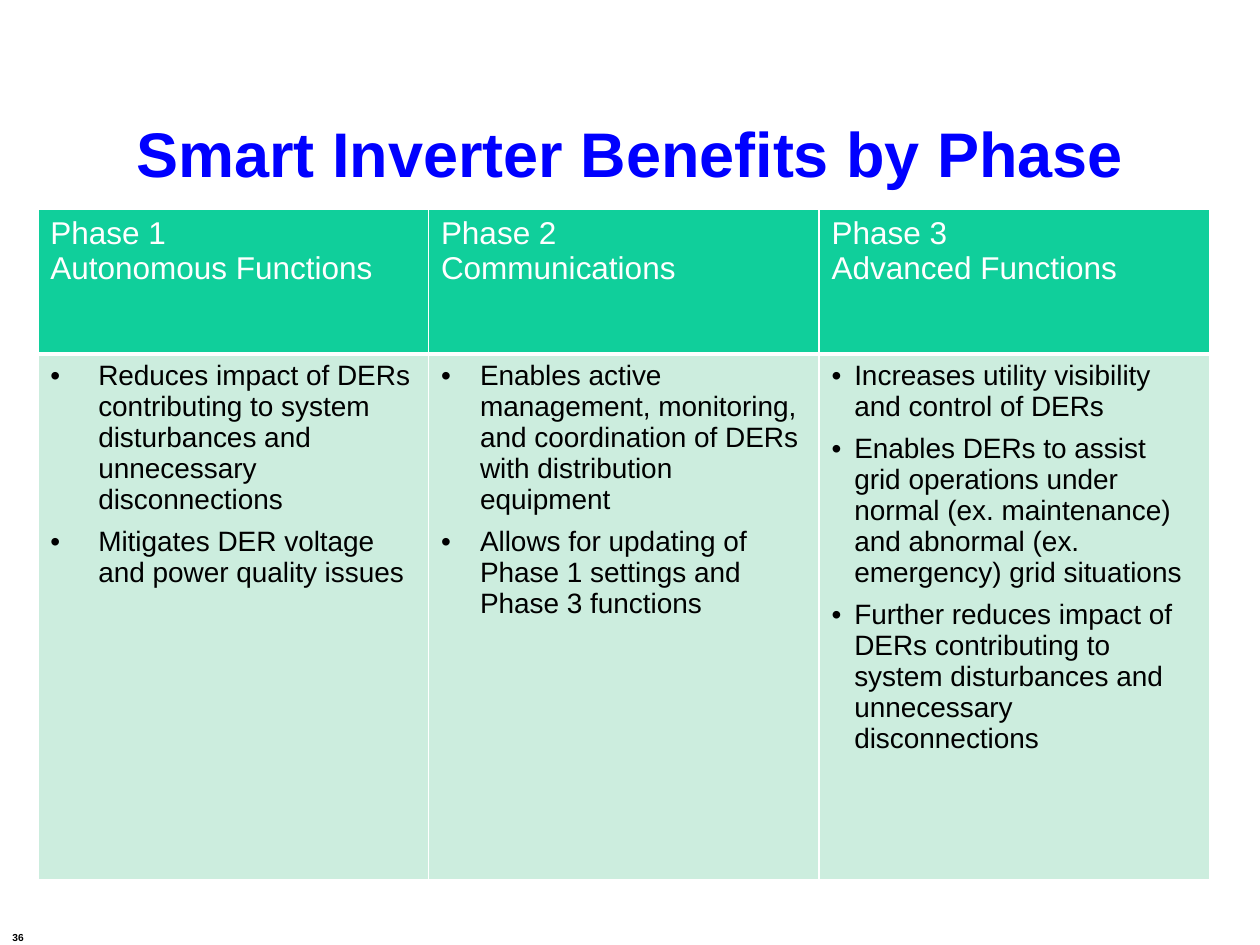
from dataclasses import dataclass

from lxml.etree import SubElement
from pptx import Presentation
from pptx.dml.color import RGBColor
from pptx.enum.text import MSO_ANCHOR, PP_ALIGN
from pptx.oxml.ns import qn
from pptx.util import Inches, Pt


@dataclass(frozen=True)
class Theme:
    font: str = "Arial"
    title: str = "0000FF"
    header: str = "10CF9B"
    body: str = "CCEDDE"
    light: str = "FFFFFF"
    dark: str = "000000"
    title_size: int = 36
    header_size: int = 18
    body_size: int = 16
    number_size: int = 10
    thin: int = 1
    thick: int = 3


@dataclass(frozen=True)
class Phase:
    heading: tuple[str, str]
    indent: float
    benefits: tuple[str, ...]


THEME = Theme()
PHASES = (
    Phase(
        ("Phase 1", "Autonomous Functions"),
        0.38,
        (
            "Reduces impact of DERs contributing to system disturbances and unnecessary disconnections",
            "Mitigates DER voltage and power quality issues",
        ),
    ),
    Phase(
        ("Phase 2", "Communications"),
        0.31,
        (
            "Enables active management, monitoring, and coordination of DERs with distribution equipment",
            "Allows for updating of Phase 1 settings and Phase 3 functions",
        ),
    ),
    Phase(
        ("Phase 3", "Advanced Functions"),
        0.18,
        (
            "Increases utility visibility and control of DERs",
            "Enables DERs to assist grid operations under normal (ex. maintenance) "
            "and abnormal (ex. emergency) grid situations",
            "Further reduces impact of DERs contributing to system disturbances and unnecessary disconnections",
        ),
    ),
)


def add_span(para, text: str, size: int, color: str, bold: bool = False):
    span = para.add_run()
    span.text = text
    span.font.name = THEME.font
    span.font.size = Pt(size)
    span.font.bold = bold
    span.font.color.rgb = RGBColor.from_string(color)
    return span


def add_bullet(para, indent: float) -> None:
    properties = para._p.get_or_add_pPr()
    properties.set("marL", str(Inches(indent)))
    properties.set("indent", str(-Inches(indent)))
    SubElement(properties, qn("a:buFont"), typeface=THEME.font)
    SubElement(properties, qn("a:buChar"), char="•")
    para.space_after = Pt(6)


def style_cell(cell, fill: str, top: int, bottom: int) -> None:
    properties = cell._tc.get_or_add_tcPr()
    widths = {"a:lnL": THEME.thin, "a:lnR": THEME.thin, "a:lnT": top, "a:lnB": bottom}
    for side, width in widths.items():
        line = SubElement(properties, qn(side), w=str(Pt(width)))
        paint = SubElement(line, qn("a:solidFill"))
        SubElement(paint, qn("a:srgbClr"), val=THEME.light)
    cell.fill.solid()
    cell.fill.fore_color.rgb = RGBColor.from_string(fill)


def fill_cell(cell, lines: tuple[str, ...], size: int, color: str, indent: float = 0) -> None:
    frame = cell.text_frame
    for index, text in enumerate(lines):
        para = frame.add_paragraph() if index else frame.paragraphs[0]
        if indent:
            add_bullet(para, indent)
        add_span(para, text, size, color)


def add_title(page, text: str) -> None:
    title = page.shapes.title
    title.left, title.top = Inches(0.5), Inches(0.67)
    title.width, title.height = Inches(9), Inches(1.08)
    title.text_frame.vertical_anchor = MSO_ANCHOR.MIDDLE
    para = title.text_frame.paragraphs[0]
    para.alignment = PP_ALIGN.CENTER
    add_span(para, text, THEME.title_size, THEME.title, True)


def add_phase_table(page, phases: tuple[Phase, ...]) -> None:
    frame = page.shapes.add_table(
        2, len(phases), Inches(0.3), Inches(1.66), Inches(9.3), Inches(5.32)
    )
    table = frame.table
    table.rows[0].height = Inches(1.15)
    table.rows[1].height = Inches(4.17)
    for column, phase in enumerate(phases):
        table.columns[column].width = Inches(3.1)
        header, body = table.cell(0, column), table.cell(1, column)
        style_cell(header, THEME.header, THEME.thin, THEME.thick)
        style_cell(body, THEME.body, THEME.thin, THEME.thin)
        fill_cell(header, phase.heading, THEME.header_size, THEME.light)
        fill_cell(body, phase.benefits, THEME.body_size, THEME.dark, phase.indent)


def add_page_number(page, number: str) -> None:
    box = page.shapes.add_textbox(Inches(0), Inches(7.25), Inches(0.42), Inches(0.22))
    box.text_frame.word_wrap = True
    span = add_span(box.text_frame.paragraphs[0], number, THEME.number_size, THEME.dark, True)
    span._r.get_or_add_rPr().set("baseline", "-25000")


def main() -> None:
    deck = Presentation()
    deck.slide_width, deck.slide_height = Inches(10), Inches(7.5)
    page = deck.slides.add_slide(deck.slide_layouts[5])
    add_title(page, "Smart Inverter Benefits by Phase")
    add_phase_table(page, PHASES)
    add_page_number(page, "36")
    deck.save("out.pptx")


if __name__ == "__main__":
    main()
